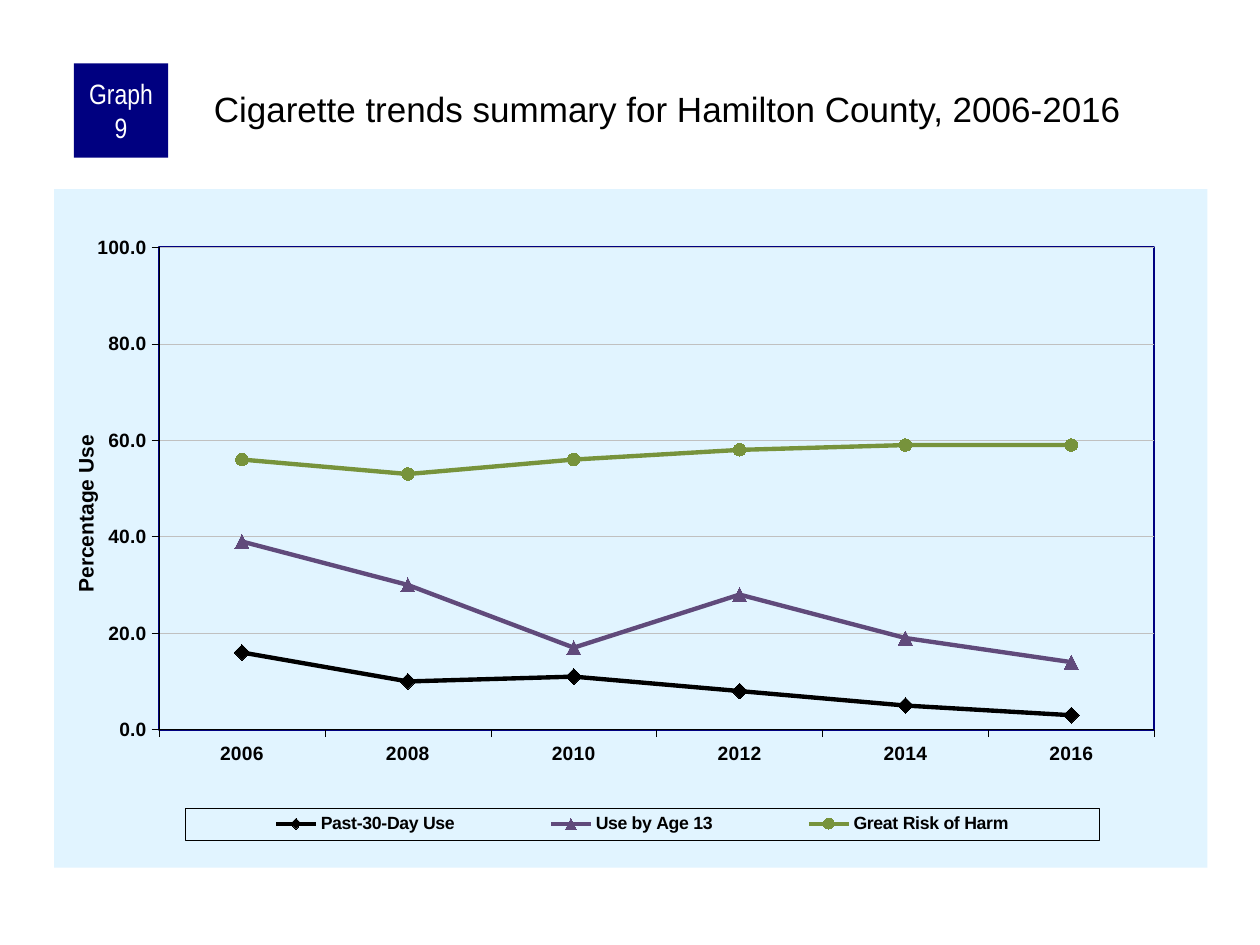
"""Build a slide with a line chart of cigarette trends in one county."""
from dataclasses import dataclass

from lxml.etree import fromstring
from pptx import Presentation
from pptx.chart.axis import _BaseAxis
from pptx.chart.chart import Chart
from pptx.chart.data import CategoryChartData
from pptx.dml.color import RGBColor
from pptx.enum.chart import XL_CHART_TYPE, XL_LEGEND_POSITION, XL_MARKER_STYLE, XL_TICK_MARK
from pptx.enum.shapes import MSO_SHAPE
from pptx.enum.text import MSO_ANCHOR, PP_ALIGN
from pptx.slide import Slide
from pptx.text.text import Font
from pptx.util import Cm, Pt

BLACK, WHITE, NAVY = "000000", "FFFFFF", "000080"
GRID_GREY, PANEL_BLUE = "C0C0C0", "E1F4FF"
CHART_NS = "http://schemas.openxmlformats.org/drawingml/2006/chart"
DRAWING_NS = "http://schemas.openxmlformats.org/drawingml/2006/main"
YEARS = ["2006", "2008", "2010", "2012", "2014", "2016"]


@dataclass(frozen=True)
class Trend:
    name: str
    percentages: tuple[int, ...]
    color: str
    marker: XL_MARKER_STYLE
    marker_size: int


TRENDS = [
    Trend("Past-30-Day Use", (16, 10, 11, 8, 5, 3), BLACK, XL_MARKER_STYLE.DIAMOND, 9),
    Trend("Use by Age 13", (39, 30, 17, 28, 19, 14), "604A7B", XL_MARKER_STYLE.TRIANGLE, 8),
    Trend("Great Risk of Harm", (56, 53, 56, 58, 59, 59), "77933C", XL_MARKER_STYLE.CIRCLE, 7),
]


def rgb(color: str) -> RGBColor:
    return RGBColor.from_string(color)


def set_font(font: Font, size: float, color: str = BLACK,
             name: str = "Arial", bold: bool = False) -> None:
    font.size, font.name, font.bold = Pt(size), name, bold
    font.color.rgb = rgb(color)


def set_line(line, color: str, width: float) -> None:
    line.color.rgb = rgb(color)
    line.width = Pt(width)


def chart_part(body: str):
    return fromstring(f'<c:root xmlns:c="{CHART_NS}" xmlns:a="{DRAWING_NS}">{body}</c:root>')[0]


def solid(color: str) -> str:
    return f'<a:solidFill><a:srgbClr val="{color}"/></a:solidFill>'


def outline(color: str, width: float) -> str:
    return f'<a:ln w="{Pt(width)}">{solid(color)}</a:ln>'


def shape_properties(body: str):
    return chart_part(f"<c:spPr>{body}</c:spPr>")


def manual_layout(x: float, y: float, size: tuple[float, float] | None = None,
                  inner: bool = False):
    target = '<c:layoutTarget val="inner"/>' if inner else ""
    extent = f'<c:w val="{size[0]}"/><c:h val="{size[1]}"/>' if size else ""
    return chart_part(
        f'<c:layout><c:manualLayout>{target}<c:xMode val="edge"/><c:yMode val="edge"/>'
        f'<c:x val="{x}"/><c:y val="{y}"/>{extent}</c:manualLayout></c:layout>')


def replace_layout(parent, layout, after: str | None = None) -> None:
    for old in parent.findall(f"{{{CHART_NS}}}layout"):
        parent.remove(old)
    if after:
        parent.find(f"{{{CHART_NS}}}{after}").addnext(layout)
    else:
        parent.insert(0, layout)


def add_heading(slide: Slide) -> None:
    badge = slide.shapes.add_shape(MSO_SHAPE.RECTANGLE, Cm(1.49), Cm(1.28), Cm(1.9), Cm(1.9))
    badge.shadow.inherit = False
    badge.fill.solid()
    badge.fill.fore_color.rgb = rgb(NAVY)
    badge.line.fill.background()
    label = badge.text_frame
    label.word_wrap, label.vertical_anchor = True, MSO_ANCHOR.MIDDLE
    label.margin_left = label.margin_right = Cm(0.13)
    label.margin_top = label.margin_bottom = 0
    label.text = "Graph 9"
    label.paragraphs[0].alignment = PP_ALIGN.CENTER
    set_font(label.paragraphs[0].font, 16, WHITE, "Arial Narrow")

    heading = slide.shapes.add_textbox(Cm(4.23), Cm(1.69), Cm(20.11), Cm(2.12)).text_frame
    heading.word_wrap = True
    heading.margin_left = heading.margin_top = Cm(0.08)
    heading.margin_right = heading.margin_bottom = 0
    heading.text = "Cigarette trends summary for Hamilton County, 2006-2016"
    set_font(heading.paragraphs[0].font, 20)


def style_axis(axis: _BaseAxis) -> None:
    axis.major_tick_mark = XL_TICK_MARK.OUTSIDE
    axis.minor_tick_mark = XL_TICK_MARK.NONE
    set_font(axis.tick_labels.font, 11, bold=True)
    set_line(axis.format.line, BLACK, 0.25)


def style_percentage_axis(chart: Chart) -> None:
    axis = chart.value_axis
    axis.minimum_scale, axis.maximum_scale, axis.major_unit = 0, 100, 20
    axis.tick_labels.number_format = "0.0"
    axis.tick_labels.number_format_is_linked = False
    axis.has_major_gridlines = True
    set_line(axis.major_gridlines.format.line, GRID_GREY, 0.25)
    title = axis.axis_title
    title.text_frame.text = "Percentage Use"
    set_font(title.text_frame.paragraphs[0].font, 12, bold=True)
    replace_layout(title._element, manual_layout(0.013, 0.357), after="tx")


def style_legend(chart: Chart) -> None:
    chart.has_legend = True
    legend = chart.legend
    legend.position = XL_LEGEND_POSITION.BOTTOM
    legend.include_in_layout = False
    set_font(legend.font, 10.1, bold=True)
    element = legend._element
    replace_layout(element, manual_layout(0.114, 0.912, (0.792, 0.047)), after="legendPos")
    element.find(f"{{{CHART_NS}}}overlay").addnext(shape_properties(outline(BLACK, 0.25)))


def add_trend_chart(slide: Slide) -> None:
    trend_data = CategoryChartData(number_format="0.0")
    trend_data.categories = YEARS
    for trend in TRENDS:
        trend_data.add_series(trend.name, trend.percentages)
    chart = slide.shapes.add_chart(XL_CHART_TYPE.LINE_MARKERS, Cm(1.09), Cm(3.81),
                                   Cm(23.25), Cm(13.68), trend_data).chart
    chart.has_title = False
    set_font(chart.font, 8)
    chart.plots[0].vary_by_categories = False
    for trend, series in zip(TRENDS, chart.plots[0].series):
        series.smooth = False
        set_line(series.format.line, trend.color, 2.5)
        series.marker.style, series.marker.size = trend.marker, trend.marker_size
        series.marker.format.fill.solid()
        series.marker.format.fill.fore_color.rgb = rgb(trend.color)
        set_line(series.marker.format.line, trend.color, 0.75)

    for axis in (chart.category_axis, chart.value_axis):
        style_axis(axis)
    style_percentage_axis(chart)
    style_legend(chart)

    chart_body = chart._chartSpace.chart
    plot_area = chart_body.plotArea
    replace_layout(plot_area, manual_layout(0.091, 0.086, (0.863, 0.711), inner=True))
    plot_area.append(shape_properties("<a:noFill/>" + outline(NAVY, 1)))
    chart_body.addnext(shape_properties(solid(PANEL_BLUE) + "<a:ln><a:noFill/></a:ln>"))


def main() -> None:
    deck = Presentation()
    deck.slide_width, deck.slide_height = Cm(25.4), Cm(19.05)
    slide = deck.slides.add_slide(deck.slide_layouts[6])
    add_heading(slide)
    add_trend_chart(slide)
    deck.save("out.pptx")


if __name__ == "__main__":
    main()
